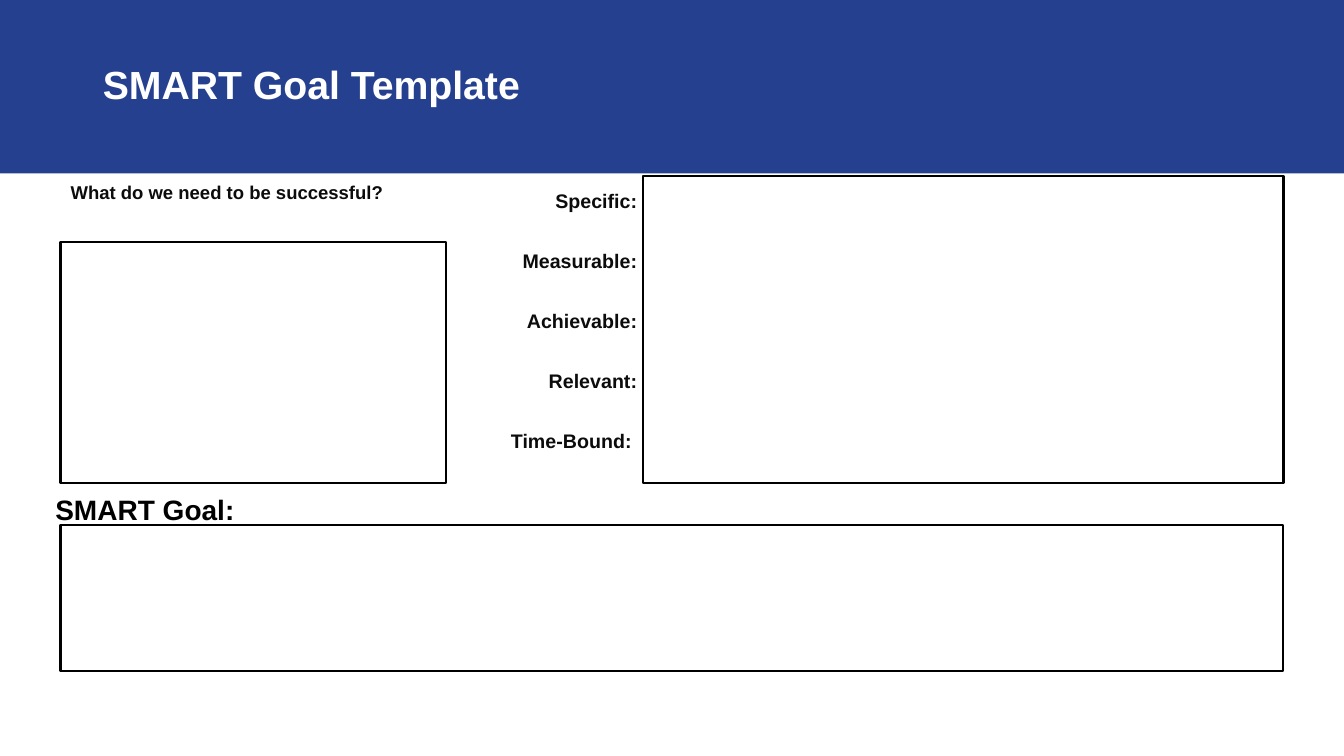
from dataclasses import dataclass

from lxml.etree import SubElement
from pptx import Presentation
from pptx.dml.color import RGBColor
from pptx.enum.shapes import MSO_SHAPE
from pptx.enum.text import MSO_ANCHOR, MSO_AUTO_SIZE, PP_ALIGN
from pptx.oxml.ns import qn
from pptx.util import Inches, Pt


@dataclass(frozen=True)
class Theme:
    """Hold the colours, font and type sizes of the slide."""
    font: str = "Arial"
    blue: RGBColor = RGBColor(0x25, 0x40, 0x8F)
    white: RGBColor = RGBColor(0xFF, 0xFF, 0xFF)
    ink: RGBColor = RGBColor(0x0C, 0x0C, 0x0C)
    black: RGBColor = RGBColor(0, 0, 0)
    title: float = 28
    goal: float = 20
    label: float = 14
    ask: float = 13.2


THEME = Theme()
WIDTH, HEIGHT = 13.33, 7.5
LEFT, TOP, WIDE = 0.6, 1.75, 12.13


def place(shape, box):
    """Move a shape to a box given in inches."""
    shape.left, shape.top, shape.width, shape.height = map(Inches, box)


def write(shape, lines, size, color, top=0.05, bottom=0.05,
          align=PP_ALIGN.LEFT, anchor=MSO_ANCHOR.TOP, gap=0, pitch=1):
    """Fill a shape with bold, unbulleted lines of text."""
    frame = shape.text_frame
    frame.word_wrap = True
    frame.auto_size = MSO_AUTO_SIZE.NONE
    frame.vertical_anchor = anchor
    frame.margin_left = frame.margin_right = Inches(0.1)
    frame.margin_top, frame.margin_bottom = Inches(top), Inches(bottom)
    for i, line in enumerate(lines):
        para = frame.add_paragraph() if i else frame.paragraphs[0]
        props = para._p.get_or_add_pPr()
        props.set("marL", "0")
        props.set("indent", "0")
        SubElement(props, qn("a:buNone"))
        para.alignment = align
        para.line_spacing = pitch
        para.space_before = Pt(gap if i else 0)
        run = para.add_run()
        run.text = line
        run.font.name, run.font.size = THEME.font, Pt(size)
        run.font.bold = True
        run.font.color.rgb = color


def add_rect(slide, box, fill=None):
    """Draw a filled band, or an outlined answer box when no fill is given."""
    rect = slide.shapes.add_shape(MSO_SHAPE.RECTANGLE, *map(Inches, box))
    rect.shadow.inherit = False
    if fill is None:
        rect.fill.background()
        rect.line.color.rgb = THEME.black
        rect.line.width = Pt(1.5)
    else:
        rect.fill.solid()
        rect.fill.fore_color.rgb = fill
        rect.line.fill.background()
    return rect


def add_head(slide, box):
    """Set the title over the blue band."""
    x, y, w, h = box
    band = add_rect(slide, box, THEME.blue)
    title = slide.shapes.title
    title.element.addprevious(band.element)
    place(title, (x + 0.92, y + 0.14, 11.5, h - 0.27))
    write(title, ["SMART Goal Template"], THEME.title, THEME.white,
          anchor=MSO_ANCHOR.MIDDLE, pitch=0.9)


def add_needs(slide, box):
    """Place the question above its answer box."""
    x, y, w, h = box
    ask = slide.placeholders[1]
    place(ask, (x, y, 3.38, 0.71))
    write(ask, ["What do we need to be successful?"], THEME.ask, THEME.ink)
    add_rect(slide, (x, y + 0.65, w, h - 0.65))


def add_smart(slide, box):
    """Place the five criteria beside their answer box."""
    x, y, w, h = box
    names = ["Specific:", "Measurable:", "Achievable:", "Relevant:",
             "Time-Bound: "]
    label = slide.placeholders[2]
    place(label, (x, y, 2, h))
    write(label, names, THEME.label, THEME.ink, top=0.15, bottom=0.1,
          align=PP_ALIGN.RIGHT, gap=27.7, pitch=0.9)
    add_rect(slide, (x + 1.96, y, w - 1.96, h))


def add_goal(slide, box):
    """Place the goal heading above its answer box."""
    x, y, w, h = box
    head = slide.shapes.add_textbox(
        *map(Inches, (x - 0.15, y, 2.06, 0.54)))
    write(head, ["SMART Goal:"], THEME.goal, THEME.black, top=0.1, bottom=0.1)
    add_rect(slide, (x, y + 0.42, w, h - 0.42))


def main():
    """Build the slide and save it."""
    deck = Presentation()
    deck.slide_width, deck.slide_height = Inches(WIDTH), Inches(HEIGHT)
    slide = deck.slides.add_slide(deck.slide_layouts[3])
    add_head(slide, (0, 0, WIDTH, 1.72))
    add_needs(slide, (LEFT, TOP, 3.82, 3.04))
    add_smart(slide, (4.42, TOP, LEFT + WIDE - 4.42, 3.04))
    add_goal(slide, (LEFT, TOP + 3.04, WIDE, 1.87))
    deck.save("out.pptx")


if __name__ == "__main__":
    main()
